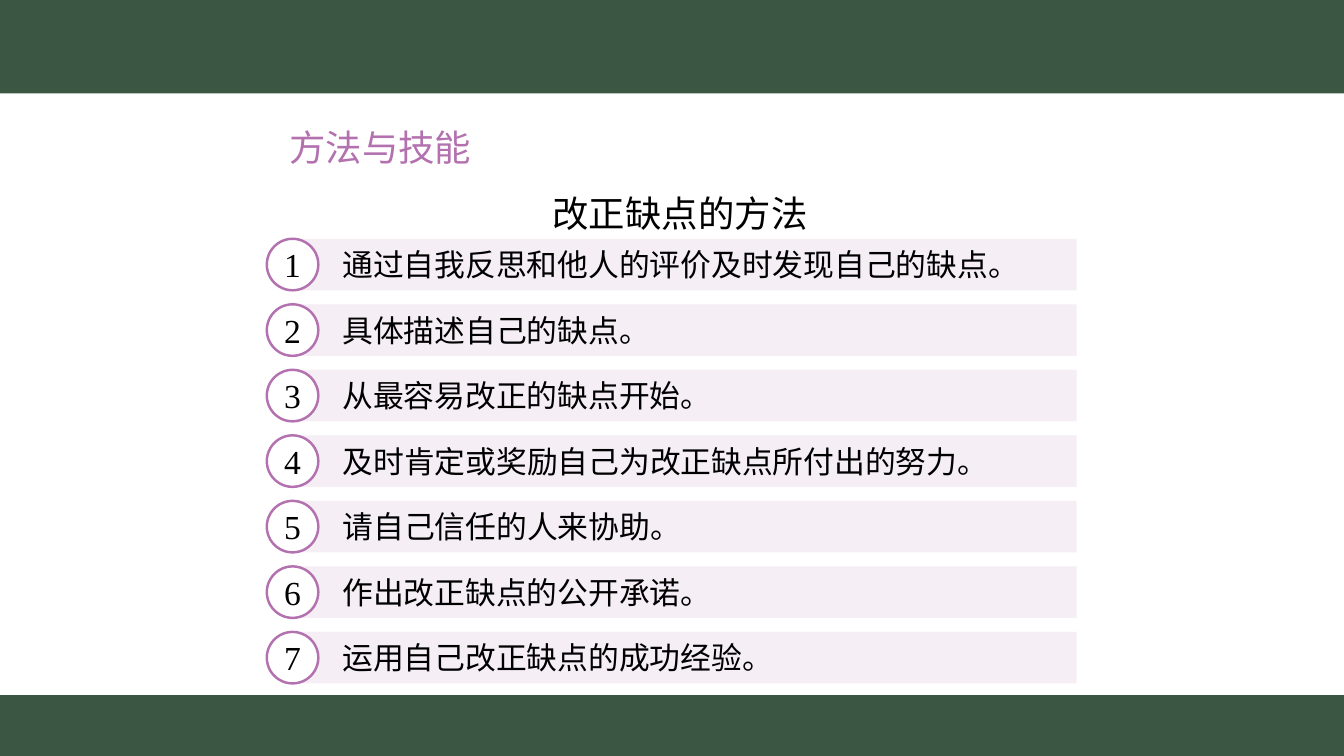
from pptx import Presentation
from pptx import util as u
from pptx.dml.color import RGBColor
from pptx.enum import shapes, text
from pptx.oxml import ns
from lxml import etree

GREEN, PURPLE, PALE = "3B5643", "B371AF", "F5EEF5"
WHITE, BLACK = "FFFFFF", "000000"
CJK = "Noto Sans CJK SC"
RECT, OVAL = shapes.MSO_SHAPE.RECTANGLE, shapes.MSO_SHAPE.OVAL

WIDTH, HEIGHT = 960, 540
METHODS = [
    "通过自我反思和他人的评价及时发现自己的缺点。",
    "具体描述自己的缺点。",
    "从最容易改正的缺点开始。",
    "及时肯定或奖励自己为改正缺点所付出的努力。",
    "请自己信任的人来协助。",
    "作出改正缺点的公开承诺。",
    "运用自己改正缺点的成功经验。",
]
FIRST_TOP, PITCH, ROW = 170.6, 46.8, 36.8


def color(hex_value):
    return RGBColor.from_string(hex_value)


class SlideBuilder:
    def __init__(self, prs):
        self.slide = prs.slides.add_slide(prs.slide_layouts[6])
        self.target = self.slide.shapes

    def start_group(self):
        """Send the elements that follow into a new group."""
        self.target = self.slide.shapes.add_group_shape().shapes

    def end_group(self):
        self.target = self.slide.shapes

    def shape(self, kind, left, top, width, height, fill, line=None):
        sp = self.target.add_shape(kind, *map(u.Pt, (left, top, width, height)))
        sp.shadow.inherit = False
        sp.fill.solid()
        sp.fill.fore_color.rgb = color(fill)
        if line:
            sp.line.color.rgb = color(line)
            sp.line.width = u.Pt(1.75)
        else:
            sp.line.fill.background()

    def textbox(self, left, top, width, height, wrap=False):
        sp = self.target.add_textbox(*map(u.Pt, (left, top, width, height)))
        tf = sp.text_frame
        tf.word_wrap = wrap
        tf.auto_size = text.MSO_AUTO_SIZE.SHAPE_TO_FIT_TEXT
        return tf

    def run(self, p, words, size, font, ink=BLACK):
        r = p.add_run()
        r.text = words
        r.font.size = u.Pt(size)
        r.font.name = font
        r.font.color.rgb = color(ink)
        etree.SubElement(r.font._element, ns.qn("a:ea"), typeface=CJK)

    def heading(self, p, words, indent, font, ink):
        p.line_spacing = 1.5
        props = p._p.get_or_add_pPr()
        props.set("marL", str(u.Pt(indent)))
        props.set("indent", "0")
        self.run(p, words, 26, font, ink)

    def method_row(self, number, words, top):
        self.start_group()
        self.shape(RECT, 202.3, top, 566.7, ROW, PALE)
        tf = self.textbox(237.6, top + 1.4, 22.2 * len(words) + 14.4, 33.9)
        self.run(tf.paragraphs[0], words, 22, "Calibri")
        self.shape(OVAL, 190.6, top, ROW, ROW, WHITE, PURPLE)
        tf = self.textbox(195.8, top + 0.3, 26.4, 36)
        self.run(tf.paragraphs[0], str(number), 24, "Times New Roman")
        self.end_group()


def main():
    prs = Presentation()
    prs.slide_width, prs.slide_height = u.Pt(WIDTH), u.Pt(HEIGHT)
    s = SlideBuilder(prs)

    s.start_group()
    s.shape(RECT, 0, 0, WIDTH, 66.7, GREEN)
    s.shape(RECT, 0, 496.5, WIDTH, 43.5, GREEN)
    s.end_group()

    tf = s.textbox(147.6, 70.6, 675.4, 96.5, wrap=True)
    s.heading(tf.paragraphs[0], "方法与技能", 52, "Arial", PURPLE)
    s.heading(tf.add_paragraph(), "改正缺点的方法", 240, CJK, BLACK)

    for i, words in enumerate(METHODS):
        s.method_row(i + 1, words, FIRST_TOP + i * PITCH)

    prs.save("out.pptx")


if __name__ == "__main__":
    main()
